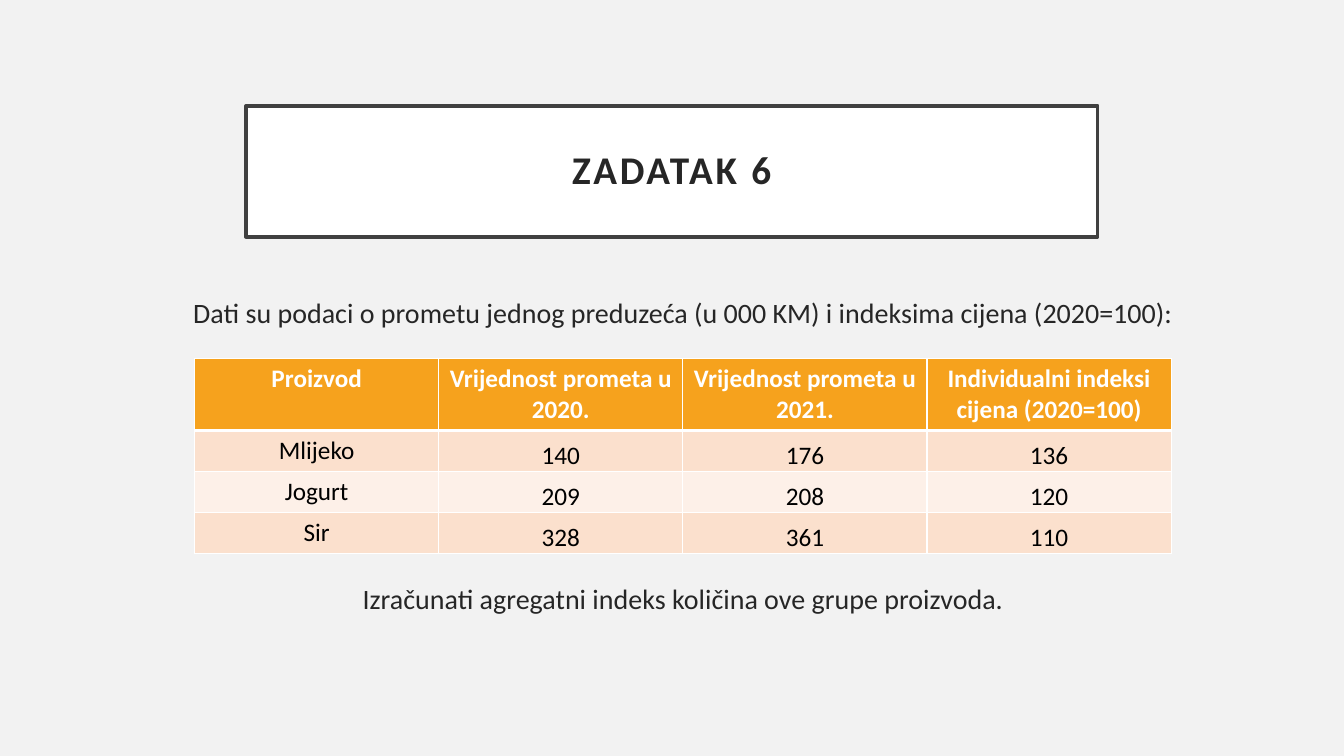
from lxml import etree
from pptx import Presentation
from pptx.dml.color import RGBColor
from pptx.enum.shapes import MSO_SHAPE
from pptx.enum.text import MSO_ANCHOR, PP_ALIGN
from pptx.oxml.ns import qn
from pptx.util import Pt

RECTANGLE = MSO_SHAPE.RECTANGLE
CENTER = PP_ALIGN.CENTER
TOP, MIDDLE, BOTTOM = MSO_ANCHOR.TOP, MSO_ANCHOR.MIDDLE, MSO_ANCHOR.BOTTOM

FONT = "Calibri"
COLORS = {
    "page": "F2F2F2",
    "white": "FFFFFF",
    "frame": "404040",
    "text": "262626",
    "black": "000000",
    "header": "F6A21D",
    "odd_row": "FBE0CD",
    "even_row": "FDF0E8",
}

HEADINGS = [
    "Proizvod",
    "Vrijednost prometa u 2020.",
    "Vrijednost prometa u 2021.",
    "Individualni indeksi cijena (2020=100)",
]
PRODUCTS = [
    ["Mlijeko", "140", "176", "136"],
    ["Jogurt", "209", "208", "120"],
    ["Sir", "328", "361", "110"],
]
COLUMN_WIDTH = 174.4
HEADER_HEIGHT, ROW_HEIGHT = 51.4, 29.3


def color(name):
    return RGBColor.from_string(COLORS[name])


def paint(fill, name):
    fill.solid()
    fill.fore_color.rgb = color(name)


def write(frame, text, size, ink="text", bold=False, tracking=0, line_spacing=None):
    """Put one centred paragraph in a text frame; tracking is in points."""
    frame.word_wrap = True
    para = frame.paragraphs[0]
    para.alignment = CENTER
    if line_spacing:
        para.line_spacing = line_spacing
    span = para.add_run()
    span.text = text
    span.font.name = FONT
    span.font.size = Pt(size)
    span.font.bold = bold
    span.font.color.rgb = color(ink)
    if tracking:
        span.font._element.set("spc", str(tracking * 100))


def add_title(page, text):
    box = page.shapes.add_shape(RECTANGLE, Pt(175.7), Pt(75.6), Pt(608.4), Pt(93.6))
    box.shadow.inherit = False
    paint(box.fill, "white")
    box.line.color.rgb = color("frame")
    box.line.width = Pt(2.5)
    frame = box.text_frame
    frame.vertical_anchor = MIDDLE
    frame.margin_left = frame.margin_right = Pt(14.4)
    frame.margin_top = frame.margin_bottom = Pt(14.4)
    write(frame, text, 28, bold=True, tracking=2, line_spacing=0.9)


def add_sentence(page, text, top):
    box = page.shapes.add_textbox(Pt(103), Pt(top), Pt(769.7), Pt(32))
    write(box.text_frame, text, 20)


def set_borders(cell, top, bottom):
    """Draw white cell borders; top and bottom are widths in points."""
    properties = cell._tc.get_or_add_tcPr()
    for side, width in (("L", 1), ("R", 1), ("T", top), ("B", bottom)):
        line = etree.SubElement(properties, qn(f"a:ln{side}"), w=str(Pt(width)))
        fill = etree.SubElement(line, qn("a:solidFill"))
        etree.SubElement(fill, qn("a:srgbClr"), val=COLORS["white"])


def fill_cell(cell, text, row, column):
    is_header = row == 0
    set_borders(cell, top=3 if row == 1 else 1, bottom=3 if is_header else 1)
    if is_header:
        paint(cell.fill, "header")
    else:
        paint(cell.fill, "odd_row" if row % 2 else "even_row")
    is_value = not is_header and column > 0
    cell.vertical_anchor = BOTTOM if is_value else TOP
    if is_value:
        cell.margin_left = cell.margin_right = cell.margin_top = Pt(0.7)
        cell.margin_bottom = Pt(0)
    write(cell.text_frame, text, 18, ink="white" if is_header else "black", bold=is_header)


def add_turnover_table(page):
    rows = [HEADINGS] + PRODUCTS
    width = COLUMN_WIDTH * len(HEADINGS)
    height = HEADER_HEIGHT + ROW_HEIGHT * len(PRODUCTS)
    table = page.shapes.add_table(
        len(rows), len(HEADINGS), Pt(139), Pt(256.2), Pt(width), Pt(height)
    ).table
    for column in table.columns:
        column.width = Pt(COLUMN_WIDTH)
    for row_index, texts in enumerate(rows):
        table.rows[row_index].height = Pt(ROW_HEIGHT if row_index else HEADER_HEIGHT)
        for column_index, text in enumerate(texts):
            cell = table.cell(row_index, column_index)
            fill_cell(cell, text, row_index, column_index)


def main():
    deck = Presentation()
    deck.slide_width, deck.slide_height = Pt(960), Pt(540)
    page = deck.slides.add_slide(deck.slide_layouts[6])
    paint(page.background.fill, "page")
    add_title(page, "ZADATAK 6")
    add_sentence(
        page,
        "Dati su podaci o prometu jednog preduzeća (u 000 KM) i indeksima cijena (2020=100):",
        top=207.4,
    )
    add_turnover_table(page)
    add_sentence(page, "Izračunati agregatni indeks količina ove grupe proizvoda.", top=412)
    deck.save("out.pptx")


if __name__ == "__main__":
    main()
